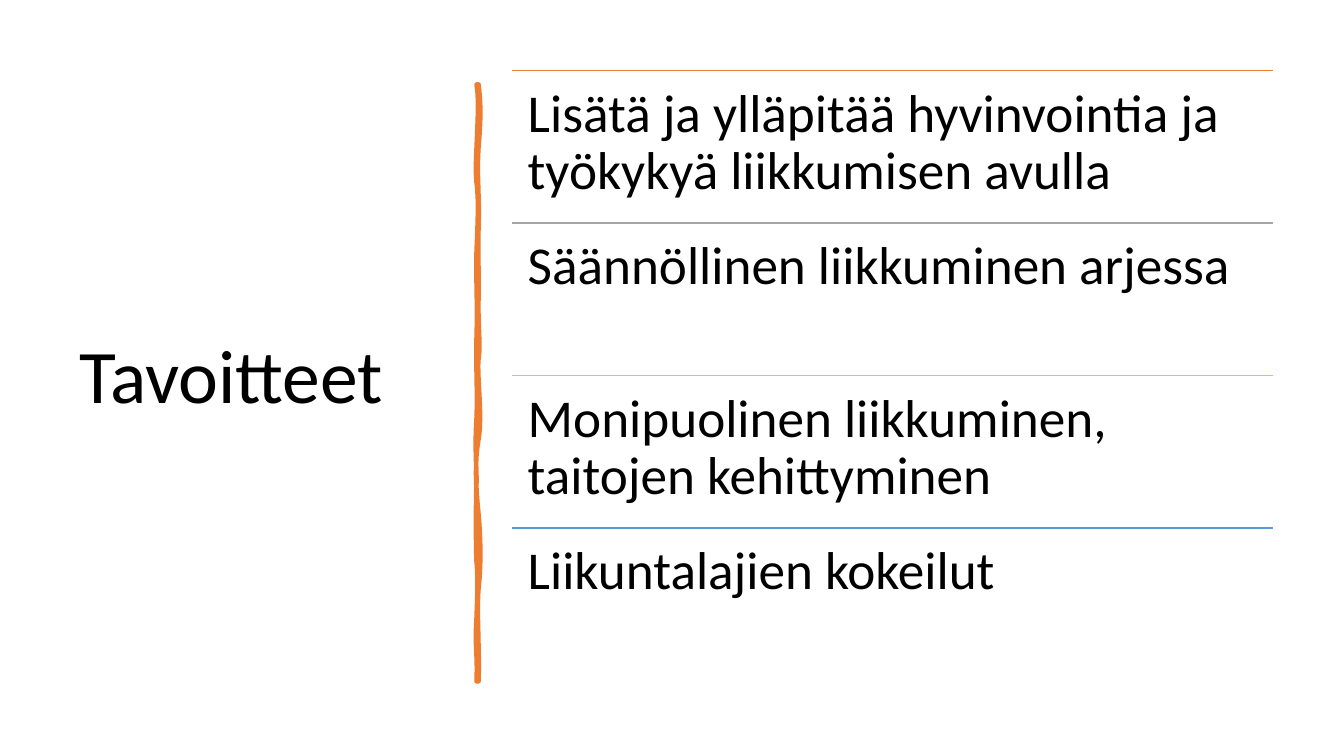
from dataclasses import dataclass

from lxml.etree import SubElement
from pptx import Presentation
from pptx.dml.color import RGBColor
from pptx.enum.shapes import MSO_CONNECTOR
from pptx.enum.text import MSO_ANCHOR
from pptx.oxml.ns import qn
from pptx.util import Cm, Pt


@dataclass(frozen=True)
class Theme:
    font: str = "Calibri"
    ink: str = "000000"
    paper: str = "FFFFFF"
    bar: str = "ED7D31"
    rules: tuple = ("ED7D31", "A5A5A5", "FFC000", "5B9BD5")
    title: int = 54
    body: int = 38
    rule: float = 1
    stroke: float = 3.25


def bend(start, ctrl1, ctrl2, end, steps=8):
    """Points along one cubic curve, without its start."""
    for i in range(1, steps + 1):
        t = i / steps
        u = 1 - t
        yield tuple(
            u**3 * a + 3 * u * u * t * b + 3 * u * t * t * c + t**3 * d
            for a, b, c, d in zip(start, ctrl1, ctrl2, end)
        )


def trace(x, top, curves):
    """Points of a wavy edge whose knots all lie at x."""
    knot = (x, top)
    points = [knot]
    for ctrl1, ctrl2, y in curves:
        points += bend(knot, ctrl1, ctrl2, (x, y))
        knot = (x, y)
    return points


class Painter:
    def __init__(self, slide, theme):
        self.slide = slide
        self.theme = theme
        back = slide.background.fill
        back.solid()
        back.fore_color.rgb = RGBColor.from_string(theme.paper)

    def text(self, words, x, y, w, h, size, inset=None, anchor=MSO_ANCHOR.TOP):
        box = self.slide.shapes.add_textbox(Cm(x), Cm(y), Cm(w), Cm(h))
        frame = box.text_frame
        frame.word_wrap = True
        frame.vertical_anchor = anchor
        if inset is not None:
            frame.margin_left = frame.margin_right = Cm(inset)
            frame.margin_top = frame.margin_bottom = Cm(inset)
        frame.text = words
        para = frame.paragraphs[0]
        para.line_spacing = 0.9
        font = para.runs[0].font
        font.name = self.theme.font
        font.size = Pt(size)
        font.color.rgb = RGBColor.from_string(self.theme.ink)

    def rule(self, x, y, w, color):
        line = self.slide.shapes.add_connector(
            MSO_CONNECTOR.STRAIGHT, Cm(x), Cm(y), Cm(x + w), Cm(y)
        )
        line.line.color.rgb = RGBColor.from_string(color)
        line.line.width = Pt(self.theme.rule)
        SubElement(line._element.spPr, qn("a:effectLst"))

    def outline(self, points, color):
        first, *rest = [(Cm(x), Cm(y)) for x, y in points]
        path = self.slide.shapes.build_freeform(*first)
        path.add_line_segments(rest, close=True)
        shape = path.convert_to_shape()
        shape.shadow.inherit = False
        shape.fill.solid()
        shape.fill.fore_color.rgb = RGBColor.from_string(color)
        shape.line.color.rgb = RGBColor.from_string(color)
        shape.line.width = Pt(self.theme.stroke)
        SubElement(shape.line._get_or_add_ln(), qn("a:round"))


# Edges of the hand-drawn bar in cm: two control points, then the next knot's y
TOP, FOOT = 2.13, 17.17
RIGHT = [
    ((12.12, 2.59), (12.12, 3.02), 3.71),
    ((12.01, 4.39), (12.09, 4.95), 5.74),
    ((12.04, 6.53), (12.07, 6.65), 7.47),
    ((12.04, 8.26), (12.12, 8.69), 9.04),
    ((12.01, 9.4), (12.17, 10.52), 11.07),
    ((11.96, 11.61), (11.99, 12.29), 12.95),
    ((12.12, 13.61), (12.12, 14.33), 14.83),
    ((12.01, 15.32), (12.09, 16.51), FOOT),
]
LEFT = [
    ((12.04, 16.41), (11.96, 16.36), 15.57),
    ((12.04, 14.81), (12.04, 14.48), 14.15),
    ((11.99, 13.82), (11.99, 12.57), 12.12),
    ((12.01, 11.66), (11.96, 11.3), 10.54),
    ((12.04, 9.8), (11.99, 9.47), 8.51),
    ((12.04, 7.57), (11.99, 7.14), 6.35),
    ((12.04, 5.54), (12.07, 5.08), 4.6),
    ((11.94, 4.14), (12.12, 2.64), TOP),
]

GOALS = [
    "Lisätä ja ylläpitää hyvinvointia ja työkykyä liikkumisen avulla",
    "Säännöllinen liikkuminen arjessa",
    "Monipuolinen liikkuminen, taitojen kehittyminen",
    "Liikuntalajien kokeilut",
]


def main():
    deck = Presentation()
    deck.slide_width, deck.slide_height = Cm(33.87), Cm(19.05)
    theme = Theme()
    paint = Painter(deck.slides.add_slide(deck.slide_layouts[6]), theme)

    # Title
    top, high = 1.78, 15.37
    paint.text("Tavoitteet", 1.75, top, 9.5, 15.52, theme.title,
               anchor=MSO_ANCHOR.MIDDLE)

    # Wavy bar
    paint.outline(trace(12.06, TOP, RIGHT) + trace(12.01, FOOT, LEFT), theme.bar)

    # Goals, each under its own rule
    left, wide = 12.9, 19.18
    step = high / len(GOALS)
    for i, (goal, color) in enumerate(zip(GOALS, theme.rules)):
        y = top + i * step
        paint.rule(left, y, wide, color)
        paint.text(goal, left, y, wide, step, theme.body, inset=0.4)

    deck.save("out.pptx")


if __name__ == "__main__":
    main()
